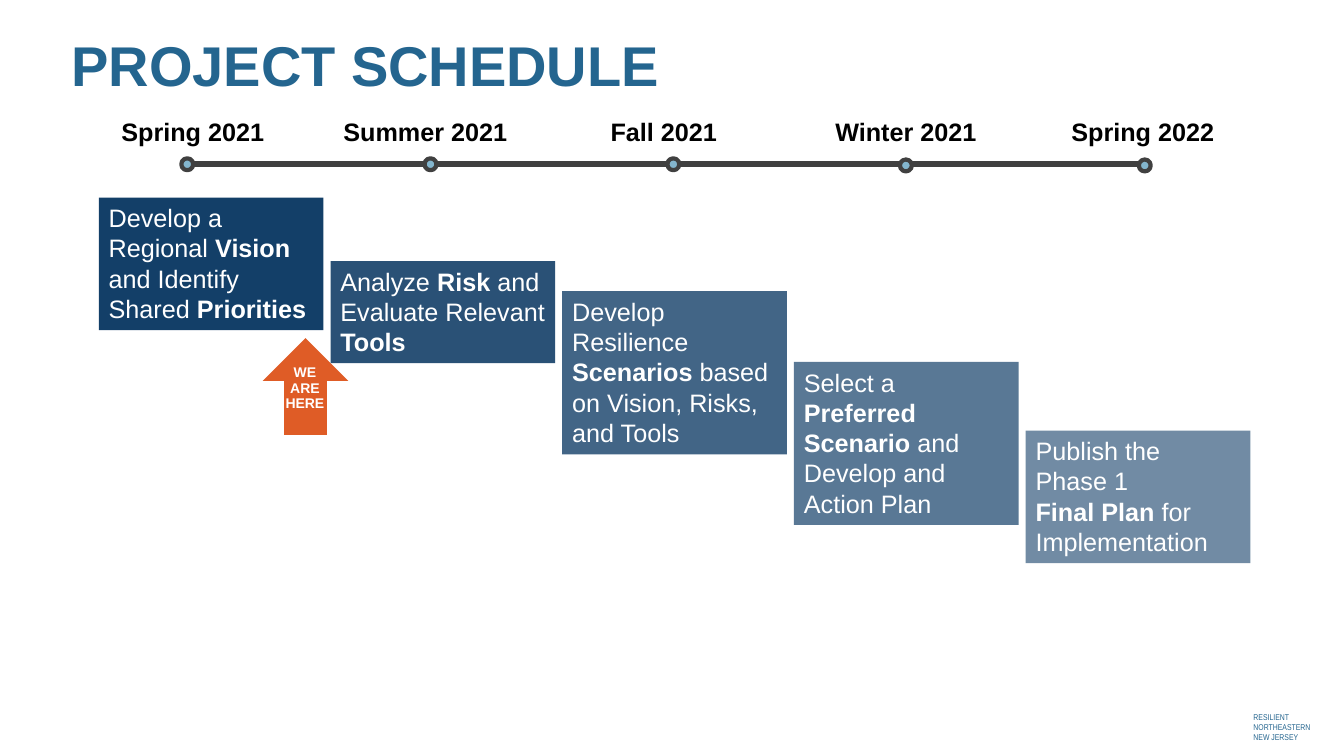
import pptx
import pptx.util
import pptx.dml.color
import pptx.enum.shapes
import pptx.enum.text
import pptx.oxml.ns
from lxml import etree

Cm, Pt = pptx.util.Cm, pptx.util.Pt
SHAPE = pptx.enum.shapes.MSO_SHAPE
ALIGN = pptx.enum.text.PP_ALIGN
ANCHOR = pptx.enum.text.MSO_ANCHOR
AUTO = pptx.enum.text.MSO_AUTO_SIZE

BLUE, NAVY, GREY = "24658F", "133F68", "404040"
SKY, ORANGE, WHITE, BLACK = "83B5CD", "DF5C26", "FFFFFF", "000000"

# Label, label centre, marker centre, marker height (cm)
SEASONS = [
    ("Spring 2021", 4.86, 4.72, 4.14),
    ("Summer 2021", 10.72, 10.85, 4.14),
    ("Fall 2021", 16.73, 16.97, 4.14),
    ("Winter 2021", 22.83, 22.83, 4.17),
    ("Spring 2022", 28.8, 28.85, 4.17),
]

# Top (cm), number of lines, paragraphs; every second run is bold
STEPS = [
    (4.98, 4, [["Develop a Regional ", "Vision", " and Identify Shared ", "Priorities"]]),
    (6.58, 3, [["Analyze ", "Risk", " and Evaluate Relevant ", "Tools"]]),
    (7.34, 5, [["Develop Resilience ", "Scenarios", " based on Vision, Risks, and Tools"]]),
    (9.12, 5, [["Select a ", "Preferred Scenario", " and Develop and Action Plan"]]),
    (10.85, 4, [["Publish the"], ["Phase 1"], ["", "Final Plan ", "for Implementation"]]),
]


def color(value):
    return pptx.dml.color.RGBColor.from_string(value)


class Deck:
    font = "Arial"

    def __init__(self, width, height):
        self.prs = pptx.Presentation()
        self.prs.slide_width, self.prs.slide_height = Cm(width), Cm(height)
        self.s = self.prs.slides.add_slide(self.prs.slide_layouts[5])

    def fill_text(self, tf, paragraphs, size, ink, bold=False, align=ALIGN.LEFT,
                  spacing=1.0, insets=None, **frame):
        frame = {"word_wrap": True, "auto_size": AUTO.NONE,
                 "vertical_anchor": ANCHOR.TOP, **frame}
        for name, value in frame.items():
            setattr(tf, name, value)
        if insets:
            for side, value in zip(("left", "top", "right", "bottom"), insets):
                setattr(tf, "margin_" + side, Cm(value))
        for i, runs in enumerate(paragraphs):
            p = tf.add_paragraph() if i else tf.paragraphs[0]
            p.alignment, p.line_spacing = align, spacing
            for j, text in enumerate(runs):
                if not text:
                    continue
                r = p.add_run()
                r.text = text
                style = {"name": self.font, "size": Pt(size), "bold": bold or j % 2 == 1}
                for name, value in style.items():
                    setattr(r.font, name, value)
                r.font.color.rgb = color(ink)

    def title(self, text, x, y, w, h):
        sp = self.s.shapes.title
        sp.left, sp.top, sp.width, sp.height = map(Cm, (x, y, w, h))
        self.fill_text(sp.text_frame, [[text]], 40, BLUE, bold=True, spacing=0.9,
                       insets=(0, 0, 0, 0))

    def text(self, text, x, y, w, h, size, ink, **style):
        sp = self.s.shapes.add_textbox(*map(Cm, (x, y, w, h)))
        self.fill_text(sp.text_frame, [[text]], size, ink, **style)

    def shape(self, kind, x, y, w, h, fill, line=None, weight=0, opacity=100):
        sp = self.s.shapes.add_shape(kind, *map(Cm, (x, y, w, h)))
        sp.shadow.inherit = False
        sp.fill.solid()
        sp.fill.fore_color.rgb = color(fill)
        if opacity < 100:
            rgb = sp._element.spPr.find(".//" + pptx.oxml.ns.qn("a:srgbClr"))
            alpha = etree.SubElement(rgb, pptx.oxml.ns.qn("a:alpha"))
            alpha.set("val", str(opacity * 1000))
        if line:
            sp.line.color.rgb, sp.line.width = color(line), Pt(weight)
        else:
            sp.line.fill.background()
        return sp

    def line(self, x1, y1, x2, y2, ink, weight):
        cx = self.s.shapes.add_connector(
            pptx.enum.shapes.MSO_CONNECTOR.STRAIGHT, *map(Cm, (x1, y1, x2, y2)))
        cx.line.color.rgb, cx.line.width = color(ink), Pt(weight)
        etree.SubElement(cx._element.spPr, pptx.oxml.ns.qn("a:effectLst"))


def main():
    deck = Deck(33.87, 19.05)
    deck.title("PROJECT SCHEDULE", 1.8, 0.97, 29.87, 1.24)

    # Timeline
    deck.line(4.85, 4.14, 28.98, 4.14, GREY, 4.5)
    label_w, dot = 5.66, 0.3
    for label, center, marker, level in SEASONS:
        deck.shape(SHAPE.OVAL, marker - dot / 2, level - dot / 2, dot, dot, SKY, GREY, 3)
        deck.text(label, center - label_w / 2, 2.81, label_w, 1.02, 18, BLACK,
                  bold=True, align=ALIGN.CENTER, auto_size=AUTO.SHAPE_TO_FIT_TEXT)

    # Current position
    deck.shape(SHAPE.UP_ARROW, 6.62, 8.52, 2.16, 2.44, ORANGE)
    deck.text("WE ARE HERE", 7.11, 9.22, 1.4, 1.37, 10, WHITE, bold=True,
              align=ALIGN.CENTER, spacing=0.9, insets=(0, 0, 0.25, 0))

    # Steps, each one paler than the last
    for i, (top, lines, paragraphs) in enumerate(STEPS):
        box = deck.shape(SHAPE.RECTANGLE, 2.49 + 5.84 * i, top, 5.66,
                         0.26 + 0.77 * lines, NAVY, opacity=100 - 10 * i)
        deck.fill_text(box.text_frame, paragraphs, 18, WHITE,
                       auto_size=AUTO.SHAPE_TO_FIT_TEXT)

    # Footer
    deck.font = "Arial Narrow"
    deck.text("RESILIENT NORTHEASTERN NEW JERSEY", 31.34, 17.81, 2.11, 1.02, 6, BLUE,
              auto_size=AUTO.SHAPE_TO_FIT_TEXT)

    deck.prs.save("out.pptx")


if __name__ == "__main__":
    main()
